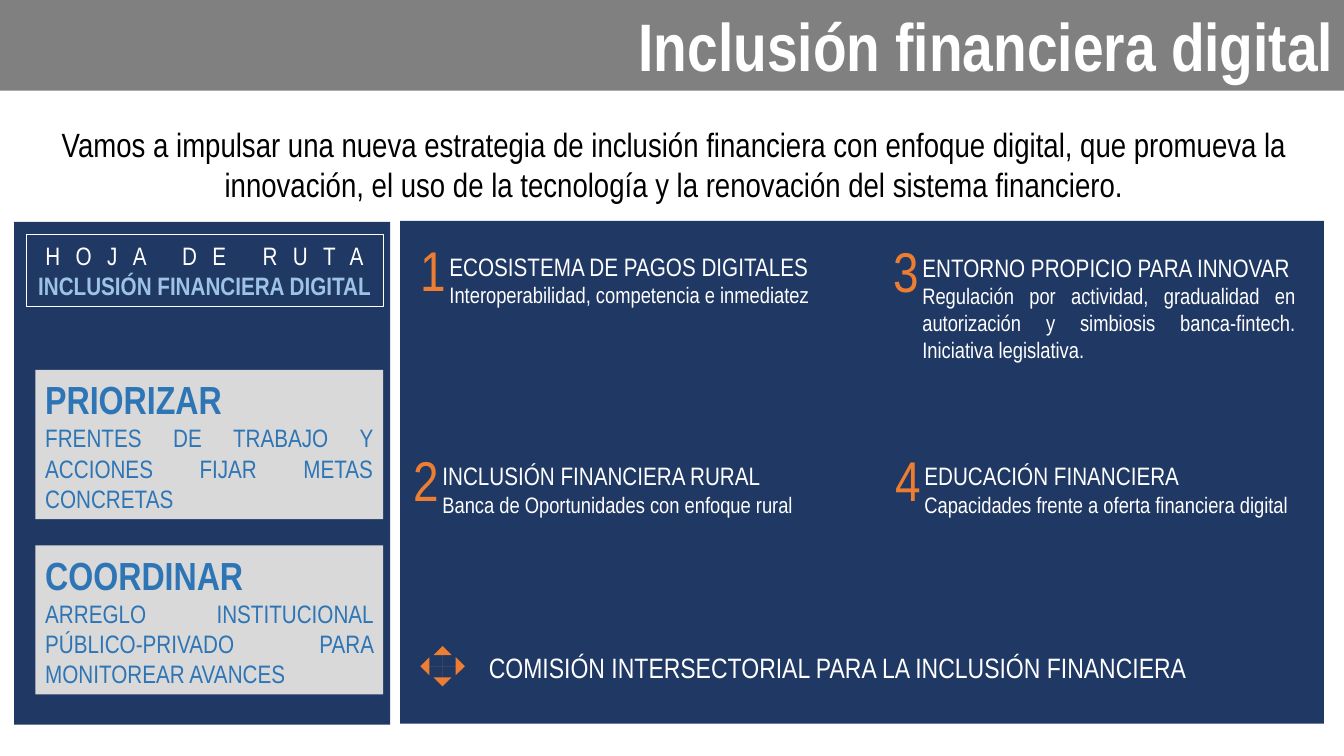
from pptx import Presentation
from pptx.dml.color import RGBColor
from pptx.enum import shapes, text
from pptx.util import Inches, Pt

FONT = "Arial Narrow"
WHITE = RGBColor(0xFF, 0xFF, 0xFF)
BLACK = RGBColor(0, 0, 0)
GREY = RGBColor(0x80, 0x80, 0x80)
PALE = RGBColor(0xD9, 0xD9, 0xD9)
NAVY = RGBColor(0x20, 0x38, 0x64)
BLUE = RGBColor(0x2E, 0x75, 0xB6)
SKY = RGBColor(0x9D, 0xC3, 0xE6)
ORANGE = RGBColor(0xED, 0x7D, 0x31)

LEFT = text.PP_ALIGN.LEFT
RIGHT = text.PP_ALIGN.RIGHT
CENTER = text.PP_ALIGN.CENTER
JUSTIFY = text.PP_ALIGN.JUSTIFY
RECT = shapes.MSO_SHAPE.RECTANGLE
ARROWS = shapes.MSO_SHAPE.QUAD_ARROW

TITLE = "Inclusión financiera digital"
INTRO = ("Vamos a impulsar una nueva estrategia de inclusión financiera con enfoque "
         "digital, que promueva la innovación, el uso de la tecnología y la renovación "
         "del sistema financiero.")
ROUTE = ("HOJA DE RUTA", "INCLUSIÓN FINANCIERA DIGITAL")
CARDS = [
    ("PRIORIZAR", "FRENTES DE TRABAJO Y ACCIONES FIJAR METAS CONCRETAS"),
    ("COORDINAR", "ARREGLO INSTITUCIONAL PÚBLICO-PRIVADO PARA MONITOREAR AVANCES"),
]
FRONTS = [
    (4.07, 2.29, "1", "ECOSISTEMA DE PAGOS DIGITALES",
     "Interoperabilidad, competencia e inmediatez"),
    (4, 4.37, "2", "INCLUSIÓN FINANCIERA RURAL",
     "Banca de Oportunidades con enfoque rural"),
    (8.76, 2.3, "3", "ENTORNO PROPICIO PARA INNOVAR",
     "Regulación por actividad, gradualidad en autorización y simbiosis "
     "banca-fintech. Iniciativa legislativa."),
    (8.78, 4.37, "4", "EDUCACIÓN FINANCIERA",
     "Capacidades frente a oferta financiera digital"),
]
BOARD = "COMISIÓN INTERSECTORIAL PARA LA INCLUSIÓN FINANCIERA"

deck = Presentation()
deck.slide_width, deck.slide_height = Inches(13.33), Inches(7.5)
slide = deck.slides.add_slide(deck.slide_layouts[6])


def write(shape, lines, align, anchor):
    frame = shape.text_frame
    frame.word_wrap = True
    frame.vertical_anchor = anchor
    for i, (words, size, color, bold) in enumerate(lines):
        para = frame.add_paragraph() if i else frame.paragraphs[0]
        para.text = words
        para.alignment = align
        para.font.name = FONT
        para.font.size = Pt(size)
        para.font.color.rgb = color
        para.font.bold = bold


def block(at, fill=None, lines=(), align=JUSTIFY, kind=RECT):
    shape = slide.shapes.add_shape(kind, *map(Inches, at))
    shape.shadow.inherit = False
    if fill is None:
        shape.fill.background()
    else:
        shape.fill.solid()
        shape.fill.fore_color.rgb = fill
    shape.line.fill.background()
    write(shape, lines, align, text.MSO_ANCHOR.MIDDLE)
    return shape


def label(at, lines, align=JUSTIFY):
    box = slide.shapes.add_textbox(*map(Inches, at))
    write(box, lines, align, text.MSO_ANCHOR.TOP)


block((0, -0.01, 13.33, 0.91), GREY, [(TITLE, 48, WHITE, True)], RIGHT)
label((0.39, 1.18, 12.58, 0.91), [(INTRO, 24, BLACK, False)], CENTER)
block((3.97, 2.19, 9.16, 4.99), NAVY)
block((0.14, 2.2, 3.73, 4.99), NAVY)

route = block((0.26, 2.33, 3.54, 0.71), None,
              [(ROUTE[0], 18, WHITE, False), (ROUTE[1], 18, SKY, True)], CENTER)
route.line.color.rgb = WHITE
route.line.width = Pt(0.75)
frame = route.text_frame
frame.margin_left = frame.margin_right = 0
frame.paragraphs[0].runs[0].font._element.set("spc", "1100")

for i, (head, body) in enumerate(CARDS):
    block((0.35, 3.67 + 1.74 * i, 3.45, 1.48), PALE,
          [(head, 28, BLUE, True), (body, 18, BLUE, False)])

for x, y, digit, head, body in FRONTS:
    label((x + 0.29, y + 0.15, 3.9, 0.67),
          [(head, 18, WHITE, False), (body, 16, WHITE, False)])
    label((x, y, 0.6, 0.77), [(digit, 40, ORANGE, False)], LEFT)

cross = block((4.17, 6.41, 0.44, 0.4), ORANGE, kind=ARROWS)
for i, ratio in enumerate((0, 0.225, 0.225)):
    cross.adjustments[i] = ratio
label((4.75, 6.4, 8.08, 0.44), [(BOARD, 20, WHITE, False)])

deck.save("out.pptx")
